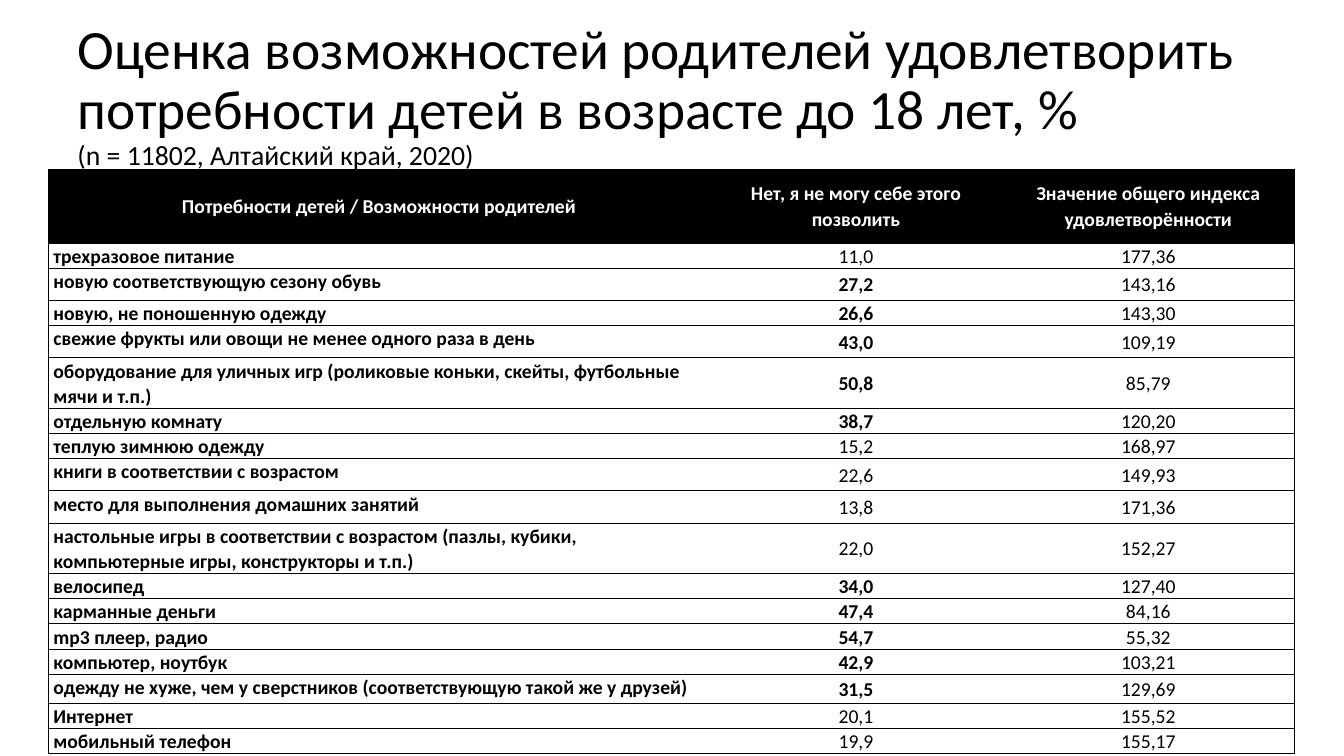
from lxml.etree import SubElement
from pptx import Presentation
from pptx.dml.color import RGBColor
from pptx.enum.text import MSO_VERTICAL_ANCHOR as Anchor, PP_PARAGRAPH_ALIGNMENT as Align
from pptx.oxml.ns import qn
from pptx.util import Inches, Pt

BLACK = RGBColor(0x00, 0x00, 0x00)
WHITE = RGBColor(0xFF, 0xFF, 0xFF)

TITLE = "Оценка возможностей родителей удовлетворить потребности детей в возрасте до 18 лет, %"
SAMPLE = "(n = 11802, Алтайский край, 2020)"

COLUMN_WIDTHS = [6.56, 2.9, 2.9]
HEADER_HEIGHT = 0.73
LOW, HIGH = 0.19, 0.32
BOLD_FROM = 25  # shares from this value on stand out in bold

HEADER = ["Потребности детей / Возможности родителей",
          "Нет, я не могу себе этого позволить",
          "Значение общего индекса удовлетворённости"]

# Need, share who cannot afford it, satisfaction index, row height
NEEDS = [
    ("трехразовое питание", "11,0", "177,36", LOW),
    ("новую соответствующую сезону обувь", "27,2", "143,16", HIGH),
    ("новую, не поношенную одежду", "26,6", "143,30", LOW),
    ("свежие фрукты или овощи не менее одного раза в день", "43,0", "109,19", HIGH),
    ("оборудование для уличных игр (роликовые коньки, скейты, футбольные мячи и т.п.)",
     "50,8", "85,79", 0.23),
    ("отдельную комнату", "38,7", "120,20", LOW),
    ("теплую зимнюю одежду", "15,2", "168,97", LOW),
    ("книги в соответствии с возрастом", "22,6", "149,93", HIGH),
    ("место для выполнения домашних занятий", "13,8", "171,36", HIGH),
    ("настольные игры в соответствии с возрастом (пазлы, кубики, "
     "компьютерные игры, конструкторы и т.п.)", "22,0", "152,27", 0.4),
    ("велосипед", "34,0", "127,40", LOW),
    ("карманные деньги", "47,4", "84,16", LOW),
    ("mp3 плеер, радио", "54,7", "55,32", LOW),
    ("компьютер, ноутбук", "42,9", "103,21", LOW),
    ("одежду не хуже, чем у сверстников (соответствующую такой же у друзей)",
     "31,5", "129,69", 0.29),
    ("Интернет", "20,1", "155,52", LOW),
    ("мобильный телефон", "19,9", "155,17", LOW),
]


def write(paragraph, text, font="Calibri", size=14, color=BLACK, bold=False,
          align=Align.LEFT, spacing=1.07):
    """Add a formatted run to a paragraph."""
    paragraph.alignment = align
    paragraph.line_spacing = spacing
    run = paragraph.add_run()
    run.text = text
    run.font.name = font
    run.font.size = Pt(size)
    run.font.bold = bold
    run.font.color.rgb = color


def set_borders(cell, visible):
    """Draw thin black lines on the named sides and none on the others."""
    properties = cell._tc.get_or_add_tcPr()
    for side in "LRTB":
        line = SubElement(properties, qn(f"a:ln{side}"), w=str(Pt(0.5)))
        if side in visible:
            fill = SubElement(line, qn("a:solidFill"))
            SubElement(fill, qn("a:srgbClr"), val=str(BLACK))
        else:
            SubElement(line, qn("a:noFill"))


class SlideBuilder:
    def __init__(self, slide):
        self.slide = slide

    def title(self, left, top, width, height):
        box = self.slide.shapes.add_textbox(Inches(left), Inches(top),
                                            Inches(width), Inches(height))
        frame = box.text_frame
        frame.word_wrap = True
        frame.vertical_anchor = Anchor.MIDDLE
        paragraph = frame.paragraphs[0]
        write(paragraph, TITLE, size=39.6, spacing=0.9)
        paragraph.add_line_break()
        write(paragraph, SAMPLE, size=19.8, spacing=0.9)

    def cell(self, cell, text, borders, fill=WHITE, anchor=Anchor.MIDDLE, **style):
        cell.margin_left = cell.margin_right = Inches(0.05)
        cell.margin_top = cell.margin_bottom = 0
        cell.vertical_anchor = anchor
        set_borders(cell, borders)
        cell.fill.solid()
        cell.fill.fore_color.rgb = fill
        write(cell.text_frame.paragraphs[0], text, **style)

    def needs_table(self, left, top):
        heights = [HEADER_HEIGHT] + [need[-1] for need in NEEDS]
        table = self.slide.shapes.add_table(
            len(heights), len(COLUMN_WIDTHS), Inches(left), Inches(top),
            Inches(sum(COLUMN_WIDTHS)), Inches(sum(heights))).table
        table.horz_banding = False
        for column, width in zip(table.columns, COLUMN_WIDTHS):
            column.width = Inches(width)
        for row, height in zip(table.rows, heights):
            row.height = Inches(height)

        # Only the outer frame and the lines between rows are drawn
        borders = ["LTB", "TB", "RTB"]
        for column, text in enumerate(HEADER):
            self.cell(table.cell(0, column), text, borders[column], fill=BLACK,
                      color=WHITE, bold=True, align=Align.CENTER)
        for row, (need, share, index, _) in enumerate(NEEDS, start=1):
            stands_out = float(share.replace(",", ".")) >= BOLD_FROM
            self.cell(table.cell(row, 0), need, borders[0], anchor=Anchor.TOP, bold=True)
            self.cell(table.cell(row, 1), share, borders[1], bold=stands_out,
                      align=Align.CENTER)
            self.cell(table.cell(row, 2), index, borders[2], align=Align.CENTER)


def main():
    presentation = Presentation()
    presentation.slide_width = Inches(13.33)
    presentation.slide_height = Inches(7.5)
    builder = SlideBuilder(presentation.slides.add_slide(presentation.slide_layouts[6]))
    builder.title(0.67, 0.23, 12.23, 1.45)
    builder.needs_table(0.48, 1.68)
    presentation.save("out.pptx")


if __name__ == "__main__":
    main()
